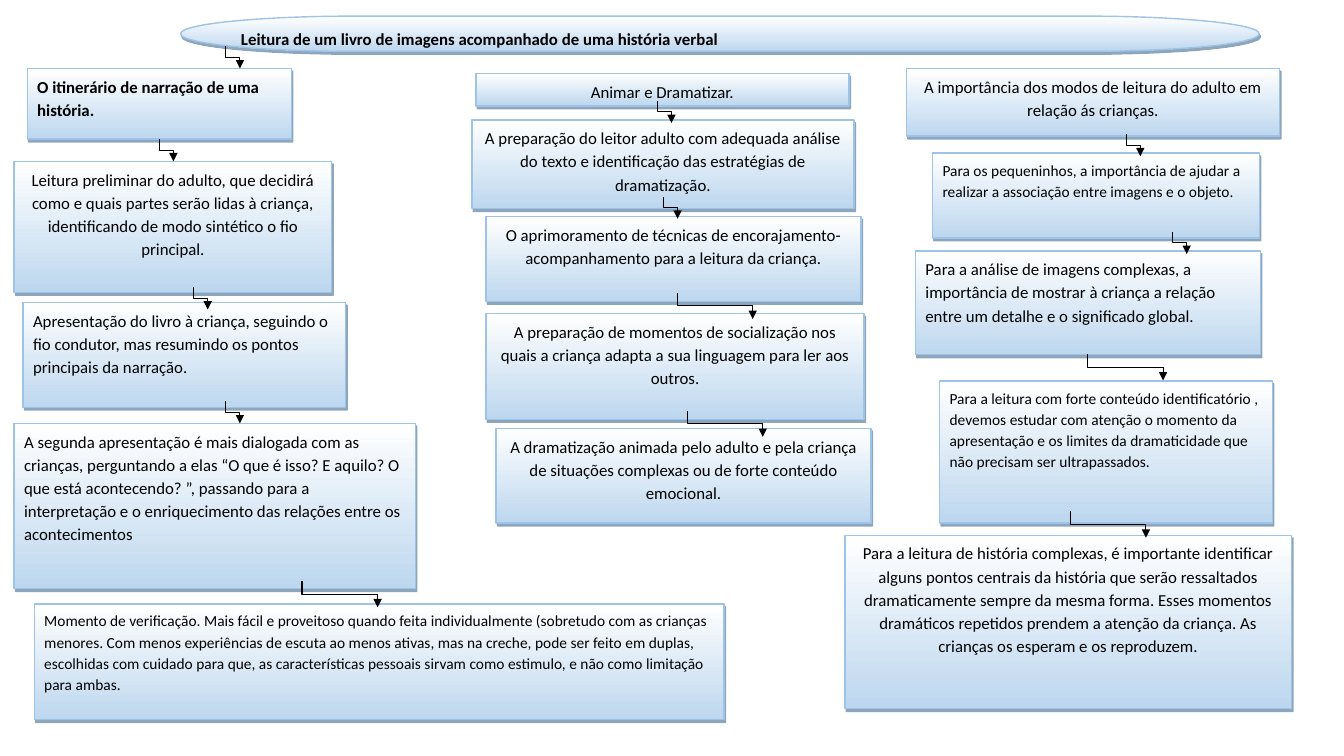
from lxml import etree
from pptx import Presentation
from pptx.dml.color import RGBColor
from pptx.enum.shapes import MSO_CONNECTOR, MSO_SHAPE
from pptx.enum.text import MSO_ANCHOR, MSO_AUTO_SIZE, PP_ALIGN
from pptx.oxml import parse_xml
from pptx.oxml.ns import nsdecls, qn
from pptx.util import Pt

PX = 9144  # 100 px to the inch
WHITE = RGBColor(0xFF, 0xFF, 0xFF)
PALE_BLUE = RGBColor(0xBD, 0xD7, 0xEE)
EDGE_BLUE = RGBColor(0x9D, 0xC3, 0xE6)
SHADOW_BLUE = RGBColor(0x1F, 0x4E, 0x79)
BLACK = RGBColor(0, 0, 0)
LEFT, CENTER = PP_ALIGN.LEFT, PP_ALIGN.CENTER

prs = Presentation()
prs.slide_width, prs.slide_height = 1333 * PX, 750 * PX
slide = prs.slides.add_slide(prs.slide_layouts[5])
shapes = slide.shapes


def add_panel(preset, left, top, width, height):
    """Add a shape with the white-to-blue gradient and the hard shadow."""
    panel = shapes.add_shape(preset, left * PX, top * PX, width * PX, height * PX)
    panel.fill.gradient()
    panel.fill.gradient_angle = 270
    for stop, color in zip(panel.fill.gradient_stops, (WHITE, PALE_BLUE)):
        stop.color.rgb = color
    panel.line.color.rgb = EDGE_BLUE
    panel.line.width = Pt(1)
    panel.shadow.inherit = False
    panel._element.spPr.find(qn("a:effectLst")).append(parse_xml(
        f'<a:outerShdw {nsdecls("a")} dist="28400" dir="3780000" rotWithShape="0">'
        f'<a:srgbClr val="{SHADOW_BLUE}"><a:alpha val="50000"/></a:srgbClr>'
        '</a:outerShdw>'))
    return panel


def write(shape, text, size, align, bold=False):
    frame = shape.text_frame
    frame.text = text
    frame.word_wrap = True
    frame.auto_size = MSO_AUTO_SIZE.NONE
    frame.vertical_anchor = MSO_ANCHOR.TOP
    paragraph = frame.paragraphs[0]
    paragraph.alignment = align
    paragraph.line_spacing = 1.15
    paragraph.space_after = Pt(10)
    font = paragraph.runs[0].font
    font.name, font.size, font.bold = "Calibri", Pt(size), bold
    font.color.rgb = BLACK


# Title over its rounded banner
add_panel(MSO_SHAPE.FLOWCHART_TERMINATOR, 179, 16, 1070, 35)
title = shapes.title
title.left, title.top, title.width, title.height = 229 * PX, 21 * PX, 969 * PX, 25 * PX
write(title, "Leitura de um livro de imagens acompanhado de uma história verbal", 12, LEFT, True)
shapes._spTree.append(title._element)

# Steps: left, top, width, height, font size, alignment, text
narration_steps = [
    (27, 68, 262, 70, 12, LEFT, "O itinerário de narração de uma história."),
    (14, 160, 315, 130, 12, CENTER,
     "Leitura preliminar do adulto, que decidirá como e quais partes serão lidas à criança, "
     "identificando de modo sintético o fio principal."),
    (23, 300, 320, 104, 12, LEFT,
     "Apresentação do livro à criança, seguindo o fio condutor, mas resumindo os pontos "
     "principais da narração."),
    (14, 420, 398, 164, 12, LEFT,
     "A segunda apresentação é mais dialogada com as crianças, perguntando a elas “O que é "
     "isso? E aquilo? O que está acontecendo? ”, passando para a interpretação e o "
     "enriquecimento das relações entre os acontecimentos"),
    (34, 599, 684, 115, 11, LEFT,
     "Momento de verificação. Mais fácil e proveitoso quando feita individualmente "
     "(sobretudo com as crianças menores. Com menos experiências de escuta ao menos ativas, "
     "mas na creche, pode ser feito em duplas, escolhidas com cuidado para que, as "
     "características pessoais sirvam como estimulo, e não como limitação para ambas."),
]
drama_steps = [
    (472, 73, 370, 32, 12, CENTER, "Animar e Dramatizar."),
    (468, 119, 379, 88, 12, CENTER,
     "A preparação do leitor adulto com adequada análise do texto e identificação das "
     "estratégias de dramatização."),
    (482, 215, 372, 84, 12, CENTER,
     "O aprimoramento de técnicas de encorajamento-acompanhamento para a leitura da criança."),
    (482, 311, 375, 105, 12, CENTER,
     "A preparação de momentos de socialização nos quais a criança adapta a sua linguagem "
     "para ler aos outros."),
    (492, 425, 372, 94, 12, CENTER,
     "A dramatização animada pelo adulto e pela criança de situações complexas ou de forte "
     "conteúdo emocional."),
]
reading_steps = [
    (899, 68, 370, 67, 12, CENTER,
     "A importância dos modos de leitura do adulto em relação ás crianças."),
    (925, 152, 324, 84, 11, LEFT,
     "Para os pequeninhos, a importância de ajudar a realizar a associação entre imagens e o "
     "objeto."),
    (908, 249, 342, 103, 12, LEFT,
     "Para a análise de imagens complexas, a importância de mostrar à criança a relação entre "
     "um detalhe e o significado global."),
    (932, 378, 330, 141, 11, LEFT,
     "Para a leitura com forte conteúdo identificatório , devemos estudar com atenção o "
     "momento da apresentação e os limites da dramaticidade que não precisam ser "
     "ultrapassados."),
    (838, 531, 443, 172, 12, CENTER,
     "Para a leitura de história complexas, é importante identificar alguns pontos centrais "
     "da história que serão ressaltados dramaticamente sempre da mesma forma. Esses momentos "
     "dramáticos repetidos prendem a atenção da criança. As crianças os esperam e os "
     "reproduzem."),
]
for left, top, width, height, size, align, text in narration_steps + drama_steps + reading_steps:
    step = add_panel(MSO_SHAPE.FLOWCHART_PROCESS, left, top, width, height)
    write(step, text, size, align, bold=text.startswith("O itinerário"))

# Arrows go down, across and down: (run, drop) with the starting points
arrow_starts = {
    (14, 22): [(224, 46), (158, 138), (192, 285), (224, 398), (652, 100), (658, 195),
               (1117, 133), (1163, 230)],
    (75, 26): [(300, 577), (672, 291), (682, 408), (1079, 352), (1062, 508)],
}
for (run, drop), starts in arrow_starts.items():
    for x, y in starts:
        # The elbow is laid out sideways around its centre, then turned upright
        left, top = x + (run - drop) // 2, y + (drop - run) // 2
        arrow = shapes.add_connector(MSO_CONNECTOR.ELBOW, (left + drop) * PX, top * PX,
                                     left * PX, (top + run) * PX)
        arrow.line.color.rgb = BLACK
        arrow.line.width = Pt(0.75)
        properties = arrow._element.spPr
        properties.find(qn("a:xfrm")).set("rot", "16200000")
        etree.SubElement(properties.find(qn("a:ln")), qn("a:tailEnd"), type="triangle")
        etree.SubElement(properties, qn("a:effectLst"))

prs.save("out.pptx")
